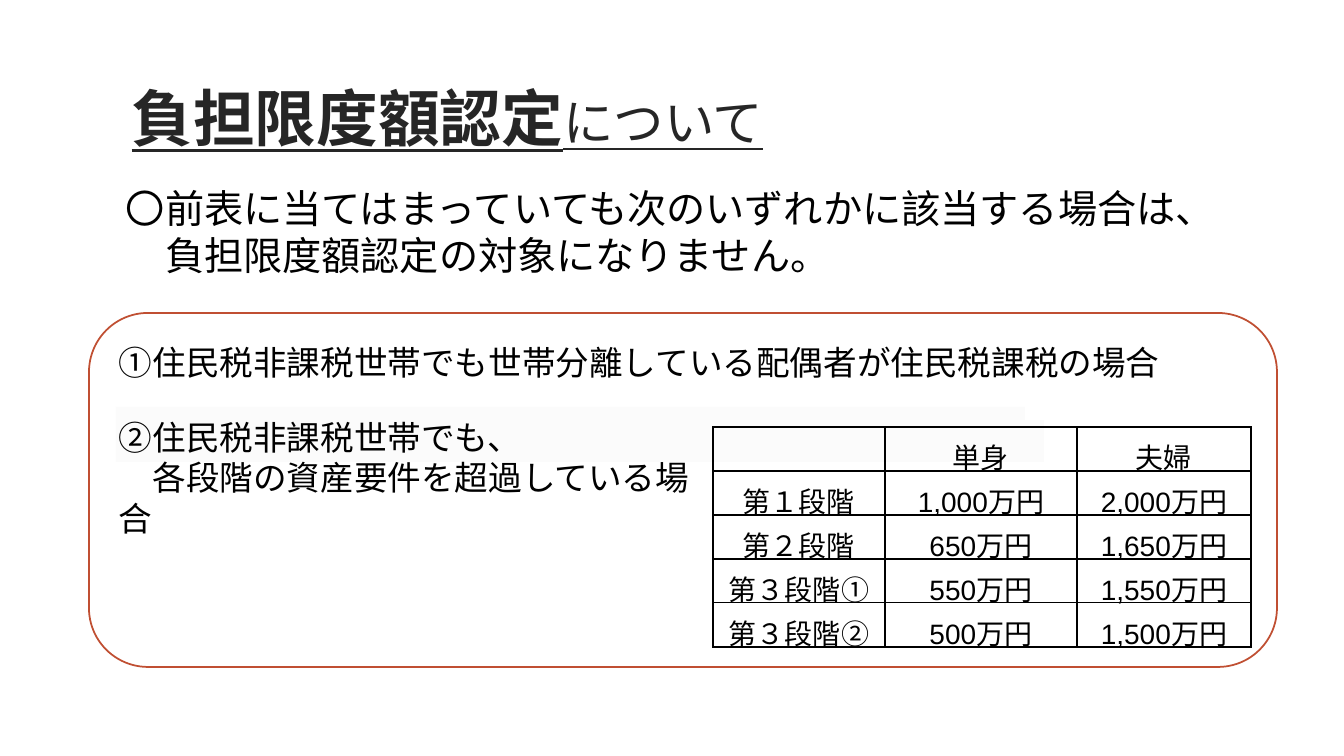
from lxml import etree
from pptx import Presentation
from pptx.dml.color import RGBColor
from pptx.enum.shapes import MSO_SHAPE
from pptx.enum.text import MSO_ANCHOR, PP_ALIGN
from pptx.oxml.ns import qn
from pptx.util import Inches, Pt

TITLE_RUNS = [("負担限度額認定", 44, True), ("について", 36, False)]
TITLE_BOX = (89, 73, 717, 86)

# box, size in points, paragraphs as (text, indented by one character)
TEXTS = [
    ((116, 179, 1139, 105), 28, [
        ("〇前表に当てはまっていても次のいずれかに該当する場合は、", False),
        ("負担限度額認定の対象になりません。", True)]),
    ((109, 337, 1069, 92), 24, [
        ("①住民税非課税世帯でも世帯分離している配偶者が住民税課税の場合", False)]),
    ((109, 412, 622, 92), 24, [
        ("②住民税非課税世帯でも、", False),
        ("各段階の資産要件を超過している場合", True)]),
]

ASSET_LIMITS = [
    ("", "単身", "夫婦"),
    ("第１段階", "1,000万円", "2,000万円"),
    ("第２段階", "650万円", "1,650万円"),
    ("第３段階①", "550万円", "1,550万円"),
    ("第３段階②", "500万円", "1,500万円"),
]
TABLE_LEFT, TABLE_TOP = 713, 427
COLUMN_WIDTHS = [172, 192, 174]
ROW_HEIGHT = 44

COLORS = {"title": "262626", "text": "000000", "band": "FBFBFB",
          "white": "FFFFFF", "frame": "C04F32"}
RECTANGLE, ROUNDED = MSO_SHAPE.RECTANGLE, MSO_SHAPE.ROUNDED_RECTANGLE
CENTER, MIDDLE, BOTTOM = PP_ALIGN.CENTER, MSO_ANCHOR.MIDDLE, MSO_ANCHOR.BOTTOM
PX = Inches(1) / 100.8


def px(*lengths):
    return [round(length * PX) for length in lengths]


def color(name):
    return RGBColor.from_string(COLORS[name])


def style(font, name, size, color_name):
    font.name, font.size = name, Pt(size)
    font.color.rgb = color(color_name)


def add_block(slide, kind, box, fill=None, line=None):
    shape = slide.shapes.add_shape(kind, *px(*box))
    shape.shadow.inherit = False
    if fill:
        shape.fill.solid()
        shape.fill.fore_color.rgb = color(fill)
    else:
        shape.fill.background()
    if line:
        shape.line.color.rgb = color(line)
        shape.line.width = Pt(1.25)
    else:
        shape.line.fill.background()


def add_title(slide):
    title = slide.shapes.title
    title.left, title.top, title.width, title.height = px(*TITLE_BOX)
    title.text_frame.vertical_anchor = BOTTOM
    paragraph = title.text_frame.paragraphs[0]
    paragraph.alignment = CENTER
    for text, size, bold in TITLE_RUNS:
        run = paragraph.add_run()
        run.text = text
        style(run.font, "Times New Roman", size, "title")
        run.font.bold, run.font.underline = bold, True


def add_text(slide, box, size, lines):
    frame = slide.shapes.add_textbox(*px(*box)).text_frame
    frame.word_wrap = True
    for index, (text, indented) in enumerate(lines):
        paragraph = frame.add_paragraph() if index else frame.paragraphs[0]
        paragraph.text = text
        if indented:
            paragraph._p.get_or_add_pPr().set("indent", str(Pt(size)))
        style(paragraph.font, "Arial", size, "text")


def set_borders(cell, bottom_width):
    properties = cell._tc.get_or_add_tcPr()
    widths = {"a:lnL": 1, "a:lnR": 1, "a:lnT": 1, "a:lnB": bottom_width}
    for index, (tag, width) in enumerate(widths.items()):
        line = etree.Element(qn(tag), w=str(Pt(width)))
        fill = etree.SubElement(line, qn("a:solidFill"))
        etree.SubElement(fill, qn("a:srgbClr"), val=COLORS["text"])
        properties.insert(index, line)


def add_limits_table(slide):
    row_count = len(ASSET_LIMITS)
    box = (TABLE_LEFT, TABLE_TOP, sum(COLUMN_WIDTHS), ROW_HEIGHT * row_count)
    table = slide.shapes.add_table(row_count, len(COLUMN_WIDTHS), *px(*box)).table
    for column, width in zip(table.columns, px(*COLUMN_WIDTHS)):
        column.width = width
    for row_index, values in enumerate(ASSET_LIMITS):
        for column_index, value in enumerate(values):
            cell = table.cell(row_index, column_index)
            cell.fill.background()
            cell.vertical_anchor = MIDDLE
            cell.margin_left, cell.margin_right, cell.margin_top, cell.margin_bottom = px(7, 7, 9, 0)
            set_borders(cell, 1.5 if row_index in (0, row_count - 1) else 1)
            paragraph = cell.text_frame.paragraphs[0]
            paragraph.text = value
            paragraph.alignment = CENTER
            style(paragraph.font, "Arial", 20, "text")
            paragraph.font.bold = False


def main():
    presentation = Presentation()
    presentation.slide_width, presentation.slide_height = px(1344, 756)
    slide = presentation.slides.add_slide(presentation.slide_layouts[5])
    add_block(slide, RECTANGLE, (116, 407, 928, 55), fill="band")
    add_title(slide)
    for box, size, lines in TEXTS:
        add_text(slide, box, size, lines)
    add_limits_table(slide)
    add_block(slide, RECTANGLE, (1025, 386, 109, 34), fill="white")
    add_block(slide, ROUNDED, (89, 313, 1188, 354), line="frame")
    presentation.save("out.pptx")


if __name__ == "__main__":
    main()
